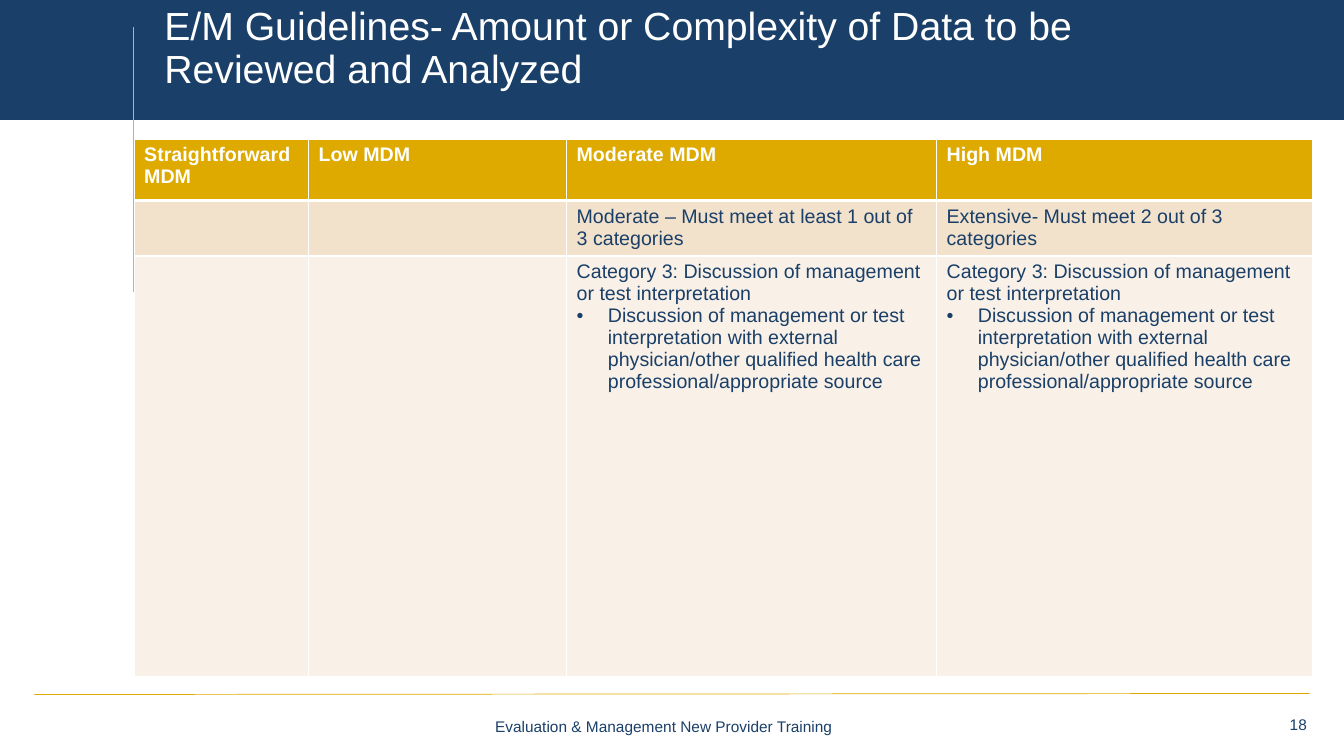
from typing import NamedTuple

from lxml.etree import SubElement
from pptx import Presentation
from pptx.dml.color import RGBColor
from pptx.enum.shapes import MSO_CONNECTOR, MSO_SHAPE
from pptx.enum.text import MSO_ANCHOR, MSO_AUTO_SIZE, PP_ALIGN
from pptx.oxml.ns import qn
from pptx.util import Inches, Pt

COLORS = {
    "navy": "1A3F68",
    "gold": "DEAA00",
    "sand": "F2E2CC",
    "cream": "F9F1E7",
    "white": "FFFFFF",
    "mist": "A9B4BE",
}
WIDTH, HEIGHT = Inches(13.33), Inches(7.5)


class Frame(NamedTuple):
    """Left, top, width and height in percent of the slide."""
    left: float
    top: float
    width: float
    height: float


class Label(NamedTuple):
    text: str
    frame: Frame
    align: PP_ALIGN


class Rule(NamedTuple):
    """Line between two points in percent of the slide."""
    x1: float
    y1: float
    x2: float
    y2: float
    color: str


class Row(NamedTuple):
    height: float
    fill: str
    color: str
    bold: bool
    bottom: float
    cells: list[list[str]]  # paragraphs of each cell; all after the first are bulleted


TITLE = "E/M Guidelines- Amount or Complexity of Data to be Reviewed and Analyzed"
TITLE_FRAME = Frame(11.48, 6.27, 75, 6.53)
BAND = Frame(0, 0, 100, 15.87)
LABELS = [
    Label("18", Frame(71.87, 93.07, 26.11, 4.67), PP_ALIGN.RIGHT),
    Label("Evaluation & Management New Provider Training\t",
          Frame(27.61, 93.6, 44.71, 4.4), PP_ALIGN.CENTER),
]
FOOTER_RULE = Rule(97.45, 91.73, 2.55, 91.87, "gold")
TITLE_RULE = Rule(9.9, 38.67, 9.9, 3.6, "mist")

CATEGORY_3 = [
    "Category 3: Discussion of management or test interpretation",
    "Discussion of management or test interpretation with external "
    "physician/other qualified health care professional/appropriate source",
]
TABLE_LEFT, TABLE_TOP = 9.98, 18.4
COLUMNS = [12.98, 19.2, 27.53, 27.98]
ROWS = [
    Row(8.13, "gold", "white", True, 3,
        [["Straightforward MDM"], ["Low MDM"], ["Moderate MDM"], ["High MDM"]]),
    Row(7.33, "sand", "navy", False, 1,
        [[], [], ["Moderate – Must meet at least 1 out of 3 categories"],
         ["Extensive- Must meet 2 out of 3 categories"]]),
    Row(55.6, "cream", "navy", False, 1, [[], [], CATEGORY_3, CATEGORY_3]),
]


def rgb(name: str) -> RGBColor:
    return RGBColor.from_string(COLORS[name])


def across(share: float) -> int:
    return round(WIDTH * share / 100)


def down(share: float) -> int:
    return round(HEIGHT * share / 100)


def emu(frame: Frame) -> tuple[int, int, int, int]:
    return (across(frame.left), down(frame.top),
            across(frame.width), down(frame.height))


def format_font(font, size: float, color: str, bold: bool = False) -> None:
    for name, value in {"name": "Arial", "size": Pt(size), "bold": bold}.items():
        setattr(font, name, value)
    font.color.rgb = rgb(color)


def fill_frame(tf, text: str, size: float, color: str, align: PP_ALIGN) -> None:
    settings = {"word_wrap": True, "auto_size": MSO_AUTO_SIZE.NONE,
                "vertical_anchor": MSO_ANCHOR.BOTTOM}
    for name, value in settings.items():
        setattr(tf, name, value)
    p = tf.paragraphs[0]
    p.alignment, p.line_spacing = align, 0.9
    r = p.add_run()
    r.text = text
    format_font(r.font, size, color)


def add_label(slide, label: Label) -> None:
    box = slide.shapes.add_textbox(*emu(label.frame))
    fill_frame(box.text_frame, label.text, 11, "navy", label.align)


def add_rule(slide, rule: Rule) -> None:
    line = slide.shapes.add_connector(
        MSO_CONNECTOR.STRAIGHT, across(rule.x1), down(rule.y1),
        across(rule.x2), down(rule.y2))
    line.line.color.rgb = rgb(rule.color)
    line.line.width = Pt(0.5)
    SubElement(line.element.spPr, qn("a:effectLst"))


def add_band(slide) -> None:
    sp = slide.shapes.add_shape(MSO_SHAPE.RECTANGLE, *emu(BAND))
    sp.shadow.inherit = False
    sp.fill.solid()
    sp.fill.fore_color.rgb = rgb("navy")
    sp.line.fill.background()


def add_title(slide) -> None:
    title = slide.shapes.title
    title.left, title.top, title.width, title.height = emu(TITLE_FRAME)
    fill_frame(title.text_frame, TITLE, 28, "white", PP_ALIGN.LEFT)
    slide.shapes.element.append(title.element)  # in front of the band


def add_bullet(p) -> None:
    pPr = p._p.get_or_add_pPr()
    pPr.set("marL", str(Inches(0.31)))
    pPr.set("indent", str(-Inches(0.31)))
    SubElement(pPr, qn("a:buFont"), typeface="Arial")
    SubElement(pPr, qn("a:buChar"), char="•")


def set_borders(cell, top: float, bottom: float) -> None:
    tcPr = cell._tc.get_or_add_tcPr()
    widths = {"a:lnL": 1, "a:lnR": 1, "a:lnT": top, "a:lnB": bottom}
    for tag, width in widths.items():
        ln = SubElement(tcPr, qn(tag), w=str(Pt(width)))
        fill = SubElement(ln, qn("a:solidFill"))
        SubElement(fill, qn("a:srgbClr"), val=COLORS["white"])


def fill_cell(cell, row: Row, paragraphs: list[str], top: float) -> None:
    set_borders(cell, top, row.bottom)
    cell.fill.solid()
    cell.fill.fore_color.rgb = rgb(row.fill)
    tf = cell.text_frame
    for i, text in enumerate(paragraphs):
        p = tf.add_paragraph() if i else tf.paragraphs[0]
        if i:
            add_bullet(p)
        r = p.add_run()
        r.text = text
        format_font(r.font, 14, row.color, row.bold)


def add_mdm_table(slide) -> None:
    frame = Frame(TABLE_LEFT, TABLE_TOP, sum(COLUMNS), sum(r.height for r in ROWS))
    table = slide.shapes.add_table(len(ROWS), len(COLUMNS), *emu(frame)).table
    for column, share in zip(table.columns, COLUMNS):
        column.width = across(share)
    top = 1
    for i, row in enumerate(ROWS):
        table.rows[i].height = down(row.height)
        for j, paragraphs in enumerate(row.cells):
            fill_cell(table.cell(i, j), row, paragraphs, top)
        top = row.bottom


def main() -> None:
    prs = Presentation()
    prs.slide_width, prs.slide_height = WIDTH, HEIGHT
    slide = prs.slides.add_slide(prs.slide_layouts[5])
    for label in LABELS:
        add_label(slide, label)
    add_rule(slide, FOOTER_RULE)
    add_band(slide)
    add_rule(slide, TITLE_RULE)
    add_title(slide)
    add_mdm_table(slide)
    prs.save("out.pptx")


if __name__ == "__main__":
    main()
